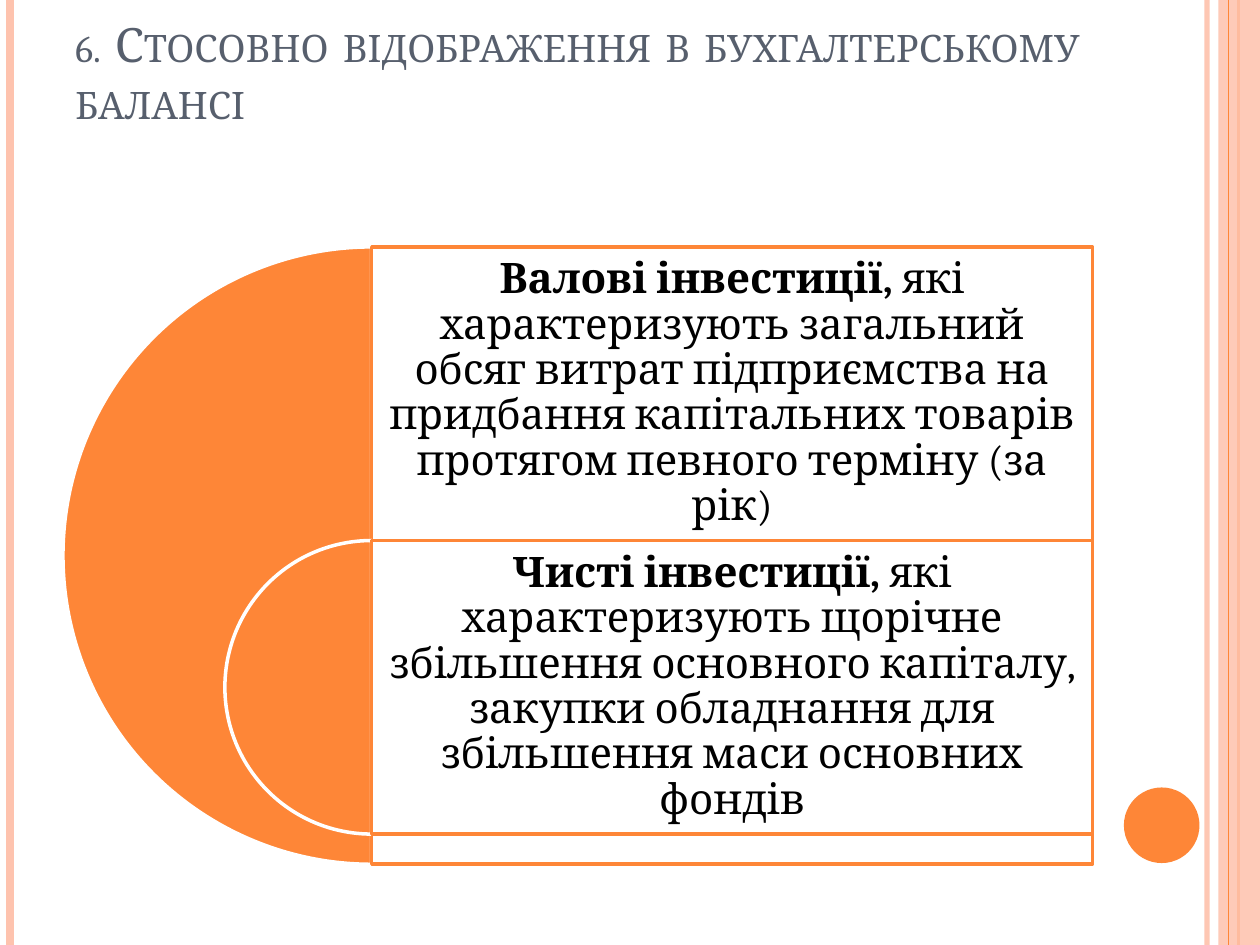
from dataclasses import dataclass

from lxml.etree import SubElement
from pptx import Presentation
from pptx.dml.color import RGBColor
from pptx.enum.shapes import MSO_CONNECTOR, MSO_SHAPE as Preset
from pptx.enum.text import MSO_ANCHOR as Anchor, PP_ALIGN as Align
from pptx.oxml.ns import qn
from pptx.util import Inches, Pt

ORANGE = RGBColor(0xFE, 0x86, 0x37)
PEACH = RGBColor(0xFE, 0xC3, 0xAE)
SLATE = RGBColor(0x57, 0x5F, 0x6D)
WHITE = RGBColor(0xFF, 0xFF, 0xFF)
BLACK = RGBColor(0, 0, 0)

FONT = "Cambria"
SLIDE_W, SLIDE_H = 10, 7.5


@dataclass
class Stripe:
    x: float
    color: RGBColor
    width: float
    opacity: int = 100


@dataclass
class Box:
    left: float
    top: float
    width: float
    height: float

    def emu(self) -> list:
        return [Inches(v) for v in (self.left, self.top, self.width, self.height)]


@dataclass
class Investment:
    top: float
    size: float
    term: str
    description: str


def apply(target, formats: dict) -> None:
    for name, value in formats.items():
        setattr(target, name, value)


def set_opacity(color_parent, percent: int) -> None:
    """Add transparency to the solid fill found below an element."""
    if percent < 100:
        color = next(color_parent.iter(qn("a:srgbClr")))
        SubElement(color, qn("a:alpha")).set("val", str(percent * 1000))


def draw_stripe(slide, stripe: Stripe) -> None:
    x = Inches(stripe.x)
    line = slide.shapes.add_connector(MSO_CONNECTOR.STRAIGHT, x, 0, x, Inches(SLIDE_H))
    line.line.color.rgb = stripe.color
    line.line.width = Pt(stripe.width)
    properties = line.line._get_or_add_ln().getparent()
    set_opacity(properties, stripe.opacity)
    SubElement(properties, qn("a:effectLst"))


def draw_shape(slide, preset: Preset, box: Box, fill: RGBColor,
               outline: RGBColor | None = None, opacity: int = 100):
    shape = slide.shapes.add_shape(preset, *box.emu())
    shape.shadow.inherit = False
    shape.fill.solid()
    shape.fill.fore_color.rgb = fill
    set_opacity(shape.element.spPr, opacity)
    if outline is None:
        shape.line.fill.background()
    else:
        shape.line.color.rgb = outline
        shape.line.width = Pt(2)
    return shape


def draw_text(slide, box: Box, runs: list[tuple[str, bool]], color: RGBColor,
              size: float, frame_format: dict, paragraph_format: dict):
    frame = slide.shapes.add_textbox(*box.emu()).text_frame
    apply(frame, {"word_wrap": True, **frame_format})
    paragraph = frame.paragraphs[0]
    apply(paragraph, paragraph_format)
    for text, bold in runs:
        run = paragraph.add_run()
        run.text = text
        apply(run.font, {"name": FONT, "size": Pt(size), "bold": bold})
        run.font.color.rgb = color
    return paragraph


# Content
TITLE = "6. Стосовно відображення в бухгалтерському балансі"
DIAGRAM_TOP, OUTER_SIZE, INNER_SIZE = 1.96, 4.9, 2.33
AXIS_X, PANEL_W = 2.95, 5.72
INVESTMENTS = [
    Investment(DIAGRAM_TOP, OUTER_SIZE, "Валові інвестиції, ",
               "які характеризують загальний обсяг витрат підприємства на "
               "придбання капітальних товарів протягом певного терміну (за рік)"),
    Investment(DIAGRAM_TOP + INNER_SIZE, INNER_SIZE, "Чисті інвестиції, ",
               "які характеризують щорічне збільшення основного капіталу, "
               "закупки обладнання для збільшення маси основних фондів"),
]
PANEL_FRAME = {"vertical_anchor": Anchor.MIDDLE} | {
    f"margin_{side}": Inches(0.1) for side in ("left", "right", "top", "bottom")}
PANEL_PARAGRAPH = {"alignment": Align.CENTER, "line_spacing": 0.9}


def draw_investment(slide, item: Investment) -> None:
    # Left half-disc, centred on the panels' left edge
    half_disc = draw_shape(
        slide, Preset.PIE,
        Box(AXIS_X - item.size / 2, item.top, item.size, item.size), ORANGE, WHITE)
    half_disc.adjustments[0] = 54
    half_disc.adjustments[1] = 162
    # Panel and its wording
    draw_shape(slide, Preset.RECTANGLE,
               Box(AXIS_X, item.top, PANEL_W, item.size), WHITE, ORANGE, opacity=90)
    draw_text(slide, Box(AXIS_X, item.top, PANEL_W, INNER_SIZE),
              [(item.term, True), (item.description, False)],
              BLACK, 24, PANEL_FRAME, PANEL_PARAGRAPH)


def main() -> None:
    deck = Presentation()
    apply(deck, {"slide_width": Inches(SLIDE_W), "slide_height": Inches(SLIDE_H)})
    slide = deck.slides.add_slide(deck.slide_layouts[6])

    # Edge decoration
    for stripe in (Stripe(9.58, PEACH, 3, 93), Stripe(0.08, PEACH, 4.5),
                   Stripe(9.83, ORANGE, 1.5)):
        draw_stripe(slide, stripe)
    draw_shape(slide, Preset.RECTANGLE, Box(9.67, 0, 0.33, SLIDE_H), PEACH, opacity=87)
    draw_stripe(slide, Stripe(9.75, ORANGE, 0.75))
    draw_shape(slide, Preset.OVAL, Box(8.92, 6.25, 0.6, 0.6), ORANGE)

    # Title in small capitals
    title = draw_text(slide, Box(0.5, 0.13, 8.17, 0.94), [(TITLE, False)], SLATE, 27,
                      {"vertical_anchor": Anchor.BOTTOM}, {"alignment": Align.JUSTIFY})
    title.runs[0].font._element.set("cap", "small")

    # Nested half-discs with panels
    for item in INVESTMENTS:
        draw_investment(slide, item)

    deck.save("out.pptx")


if __name__ == "__main__":
    main()
